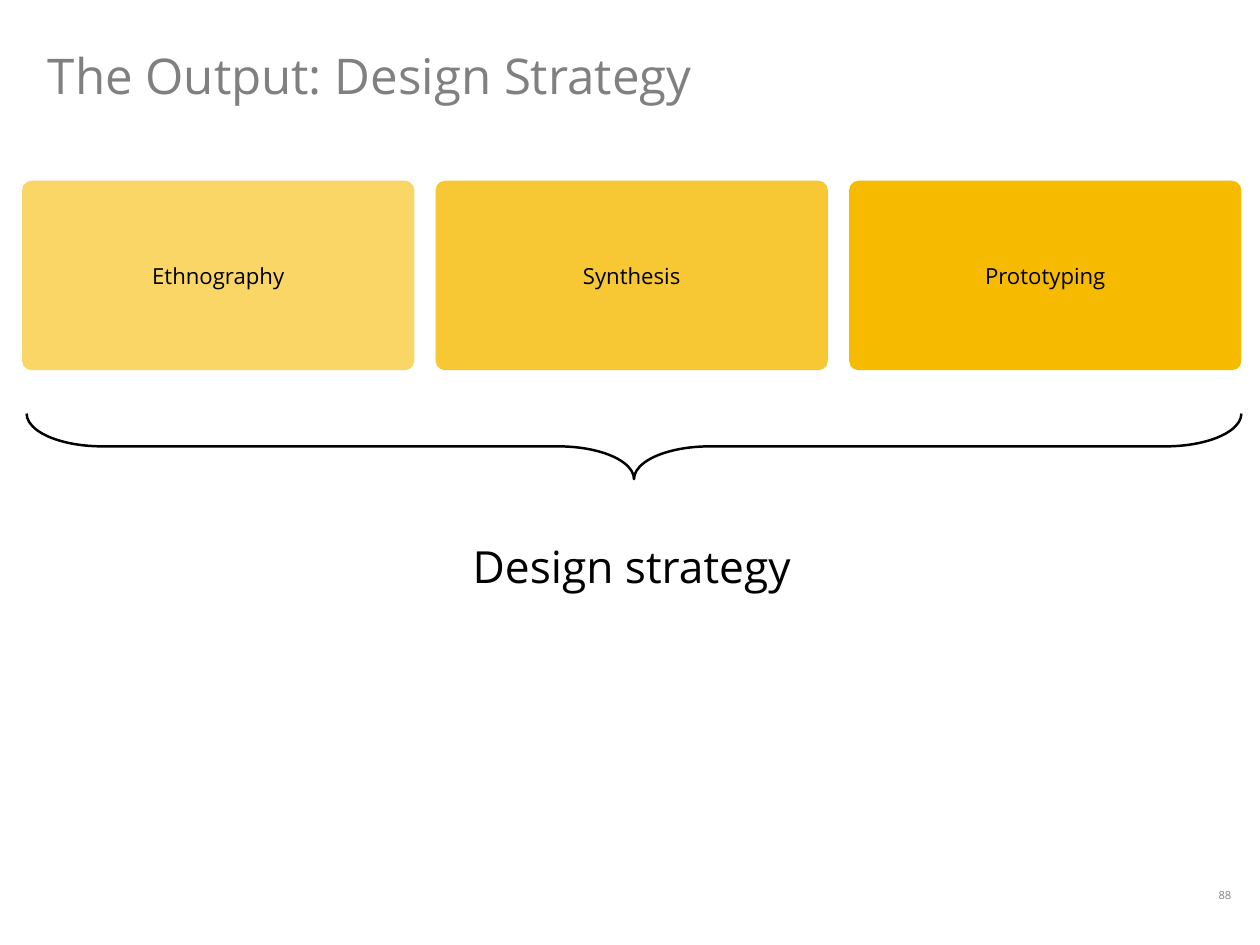
from lxml import etree
from pptx import Presentation
from pptx.dml.color import RGBColor
from pptx.enum.shapes import MSO_SHAPE
from pptx.enum.text import MSO_ANCHOR, MSO_AUTO_SIZE, PP_ALIGN
from pptx.oxml.ns import qn
from pptx.util import Inches, Pt

ROUNDED = MSO_SHAPE.ROUNDED_RECTANGLE
BRACE = MSO_SHAPE.RIGHT_BRACE
LEFT, CENTER = PP_ALIGN.LEFT, PP_ALIGN.CENTER
TOP, MIDDLE = MSO_ANCHOR.TOP, MSO_ANCHOR.MIDDLE

BLACK = RGBColor(0x00, 0x00, 0x00)
GRAY = RGBColor(0x80, 0x80, 0x80)
AMBER = RGBColor(0xF6, 0xBB, 0x00)
FONT = "Open Sans"

WIDTH, HEIGHT = 14.22, 10.67
MARGIN = 0.25
CONTENT_WIDTH = 13.76
GAP = 0.24
PHASES = [("Ethnography", 60), ("Synthesis", 80), ("Prototyping", 100)]


def inches(*lengths):
    return [Inches(length) for length in lengths]


def write(shape, text, size, color=BLACK, align=CENTER, anchor=TOP, inset=None):
    frame = shape.text_frame
    frame.word_wrap = True
    frame.auto_size = MSO_AUTO_SIZE.NONE
    frame.vertical_anchor = anchor
    if inset is not None:
        frame.margin_left = frame.margin_right = Inches(inset)
        frame.margin_top = frame.margin_bottom = Inches(inset)
    para = frame.paragraphs[0]
    para.alignment = align
    span = para.add_run()
    span.text = text
    span.font.name = FONT
    span.font.size = Pt(size)
    span.font.color.rgb = color


def set_opacity(shape, percent):
    color = shape._element.spPr.find(qn("a:solidFill")).find(qn("a:srgbClr"))
    etree.SubElement(color, qn("a:alpha")).set("val", str(percent * 1000))


def add_title(page, text, left, top, width, height):
    title = page.shapes.title
    title.left, title.top, title.width, title.height = inches(left, top, width, height)
    write(title, text, 40, color=GRAY, align=LEFT, anchor=MIDDLE, inset=0)


def add_label(page, text, box, **style):
    write(page.shapes.add_textbox(*inches(*box)), text, **style)


def add_phases(page, left, top, width, height):
    """Fill the box with equal cards that grow stronger in colour."""
    card_width = (width - GAP * (len(PHASES) - 1)) / len(PHASES)
    for column, (name, opacity) in enumerate(PHASES):
        card_left = left + column * (card_width + GAP)
        card = page.shapes.add_shape(ROUNDED, *inches(card_left, top, card_width, height))
        card.adjustments[0] = 0.05
        card.shadow.inherit = False
        card.fill.solid()
        card.fill.fore_color.rgb = AMBER
        if opacity < 100:
            set_opacity(card, opacity)
        card.line.fill.background()
        write(card, name, 18, anchor=MIDDLE)


def add_brace(page, left, top, width, height):
    """Span the box with a right brace turned to point down."""
    turned_left = left + (width - height) / 2
    turned_top = top + (height - width) / 2
    brace = page.shapes.add_shape(BRACE, *inches(turned_left, turned_top, height, width))
    brace.rotation = 90
    brace.adjustments[0] = 1.155
    brace.adjustments[1] = 0.5
    brace.shadow.inherit = False
    brace.fill.background()
    brace.line.color.rgb = BLACK
    brace.line.width = Pt(2)


def main():
    deck = Presentation()
    deck.slide_width, deck.slide_height = inches(WIDTH, HEIGHT)
    page = deck.slides.add_slide(deck.slide_layouts[5])
    add_title(page, "The Output: Design Strategy", 0.54, 0.51, 12.67, 0.67)
    add_phases(page, MARGIN, 2.04, CONTENT_WIDTH, 2.14)
    add_brace(page, 0.3, 4.67, 13.71, 0.74)
    add_label(page, "Design strategy", (MARGIN, 6.04, CONTENT_WIDTH, 0.71), size=36)
    add_label(page, "88", (13.57, 9.98, 0.51, 0.3), size=9, color=GRAY)
    deck.save("out.pptx")


if __name__ == "__main__":
    main()
